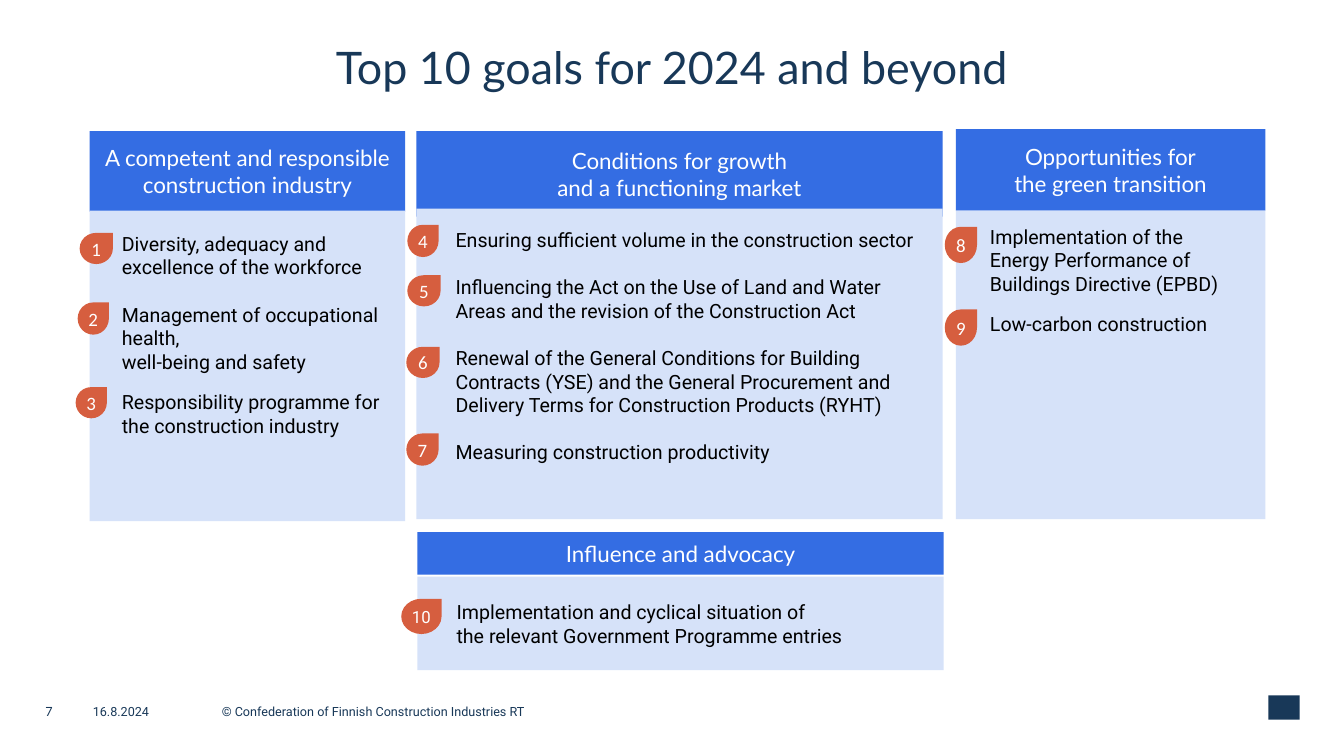
from copy import deepcopy
from dataclasses import dataclass

from pptx import Presentation
from pptx.dml.color import RGBColor
from pptx.enum.shapes import MSO_SHAPE
from pptx.enum.text import MSO_ANCHOR, PP_ALIGN
from pptx.oxml.ns import qn
from pptx.util import Inches, Pt

COLORS = {"navy": "183858", "blue": "346DE3", "pale": "D6E2F9",
          "orange": "D65E3F", "white": "FFFFFF", "black": "000000"}

Box = tuple[float, float, float, float]


@dataclass
class TextStyle:
    font: str
    size: float
    color: str
    align: PP_ALIGN = PP_ALIGN.LEFT
    anchor: MSO_ANCHOR = MSO_ANCHOR.MIDDLE
    inset: tuple[float, float] = (0, 0)


@dataclass
class Goal:
    number: int
    text: str
    badge: Box
    space_before: float = 0


@dataclass
class Card:
    heading: str
    header: Box
    body: Box
    text_box: Box
    goals: list[Goal]
    anchor: MSO_ANCHOR = MSO_ANCHOR.TOP


TITLE = TextStyle("Lato", 32, "navy", PP_ALIGN.CENTER, MSO_ANCHOR.TOP)
HEADING = TextStyle("Lato", 16, "white", PP_ALIGN.CENTER, inset=(0.07, 0.04))
BADGE = TextStyle("Calibri", 13.5, "white", PP_ALIGN.CENTER)
WIDE_BADGE = TextStyle("Roboto", 12, "white", PP_ALIGN.CENTER)
FOOTER = TextStyle("Roboto", 9, "navy")
PAGE_NUMBER = TextStyle("Lato", 9, "navy")

CARDS = [
    Card("A competent and responsible construction industry",
         (0.89, 1.3, 3.13, 0.8), (0.89, 2.09, 3.13, 3.08), (1.11, 2.25, 2.78, 2.15), [
             Goal(1, "Diversity, adequacy and excellence of the workforce",
                  (0.79, 2.31, 0.33, 0.31)),
             Goal(2, "Management of occupational health,\vwell-being and safety",
                  (0.77, 3, 0.31, 0.32), 17),
             Goal(3, "Responsibility programme for the construction industry",
                  (0.75, 3.84, 0.31, 0.31), 12)]),
    Card("Conditions for growth\vand a functioning market",
         (4.13, 1.3, 5.22, 0.85), (4.13, 2.07, 5.22, 3.08), (4.42, 2.21, 4.84, 2.93), [
             Goal(4, "Ensuring sufficient volume in the construction sector",
                  (4.04, 2.23, 0.31, 0.32)),
             Goal(5, "Influencing the Act on the Use of Land and Water Areas and "
                     "the revision of the Construction Act",
                  (4.04, 2.73, 0.33, 0.31), 17),
             Goal(6, "Renewal of the General Conditions for Building Contracts (YSE) and "
                     "the General Procurement and Delivery Terms for Construction "
                     "Products (RYHT)",
                  (4.03, 3.44, 0.33, 0.31), 17),
             Goal(7, "Measuring construction productivity",
                  (4.03, 4.3, 0.32, 0.32), 17)]),
    Card("Opportunities for\vthe green transition",
         (9.48, 1.28, 3.07, 0.81), (9.48, 2.09, 3.07, 3.06), (9.72, 2.18, 2.71, 1.21), [
             Goal(8, "Implementation of the Energy Performance of Buildings Directive (EPBD)",
                  (9.37, 2.25, 0.32, 0.36)),
             Goal(9, "Low-carbon construction", (9.37, 3.07, 0.32, 0.36), 12)]),
    Card("Influence and advocacy",
         (4.14, 5.28, 5.22, 0.42), (4.14, 5.72, 5.22, 0.93), (4.43, 5.72, 4.84, 0.93), [
             Goal(10, "Implementation and cyclical situation of\v"
                      "the relevant Government Programme entries",
                  (3.98, 5.94, 0.4, 0.35))], MSO_ANCHOR.MIDDLE),
]


def rgb(name: str) -> RGBColor:
    return RGBColor.from_string(COLORS[name])


def write(sp, paragraphs: list[tuple[str, float]], style: TextStyle) -> None:
    """Fill a shape with (text, space before) paragraphs in one style."""
    tf = sp.text_frame
    dx, dy = map(Inches, style.inset)
    frame = {"word_wrap": True, "vertical_anchor": style.anchor,
             "margin_left": dx, "margin_right": dx,
             "margin_top": dy, "margin_bottom": dy}
    for name, value in frame.items():
        setattr(tf, name, value)
    for i, (text, gap) in enumerate(paragraphs):
        p = tf.paragraphs[0] if i == 0 else tf.add_paragraph()
        p.text = text
        p.alignment = style.align
        if gap:
            p.space_before = Pt(gap)
        for r in p.runs:
            for name, value in {"name": style.font, "size": Pt(style.size)}.items():
                setattr(r.font, name, value)
            r.font.color.rgb = rgb(style.color)
        # Line breaks take the size of the text around them
        for br in p._p.findall(qn("a:br")):
            br.append(deepcopy(p.runs[0]._r.rPr))


def add_block(s, kind: MSO_SHAPE, box: Box, fill: str):
    sp = s.shapes.add_shape(kind, *map(Inches, box))
    sp.shadow.inherit = False
    sp.fill.solid()
    sp.fill.fore_color.rgb = rgb(fill)
    sp.line.fill.background()
    return sp


def add_text(s, box: Box, paragraphs: list[tuple[str, float]], style: TextStyle) -> None:
    write(s.shapes.add_textbox(*map(Inches, box)), paragraphs, style)


def add_card(s, card: Card) -> None:
    header = add_block(s, MSO_SHAPE.RECTANGLE, card.header, "blue")
    write(header, [(card.heading, 0)], HEADING)
    add_block(s, MSO_SHAPE.RECTANGLE, card.body, "pale")
    style = TextStyle("Roboto", 14, "black", anchor=card.anchor, inset=(0.1, 0.05))
    add_text(s, card.text_box, [(g.text, g.space_before) for g in card.goals], style)


def add_badge(s, goal: Goal) -> None:
    sp = add_block(s, MSO_SHAPE.TEAR, goal.badge, "orange")
    write(sp, [(str(goal.number), 0)], BADGE if goal.number < 10 else WIDE_BADGE)


def main() -> None:
    prs = Presentation()
    prs.slide_width, prs.slide_height = Inches(13.33), Inches(7.5)
    s = prs.slides.add_slide(prs.slide_layouts[6])

    # Title
    add_text(s, (2, 0.39, 9.33, 0.57), [("Top 10 goals for 2024 and beyond", 0)], TITLE)

    # Cards, then the numbered badges over their edges
    for card in CARDS:
        add_card(s, card)
    for card in CARDS:
        for goal in card.goals:
            add_badge(s, goal)

    # Footer
    for left, width, text, style in [
        (0.45, 0.47, "7", PAGE_NUMBER),
        (0.92, 1.28, "16.8.2024", FOOTER),
        (2.2, 9.76, "© Confederation of Finnish Construction Industries RT", FOOTER),
    ]:
        add_text(s, (left, 6.98, width, 0.16), [(text, 0)], style)
    add_block(s, MSO_SHAPE.RECTANGLE, (12.58, 6.9, 0.31, 0.24), "navy")

    prs.save("out.pptx")


if __name__ == "__main__":
    main()
